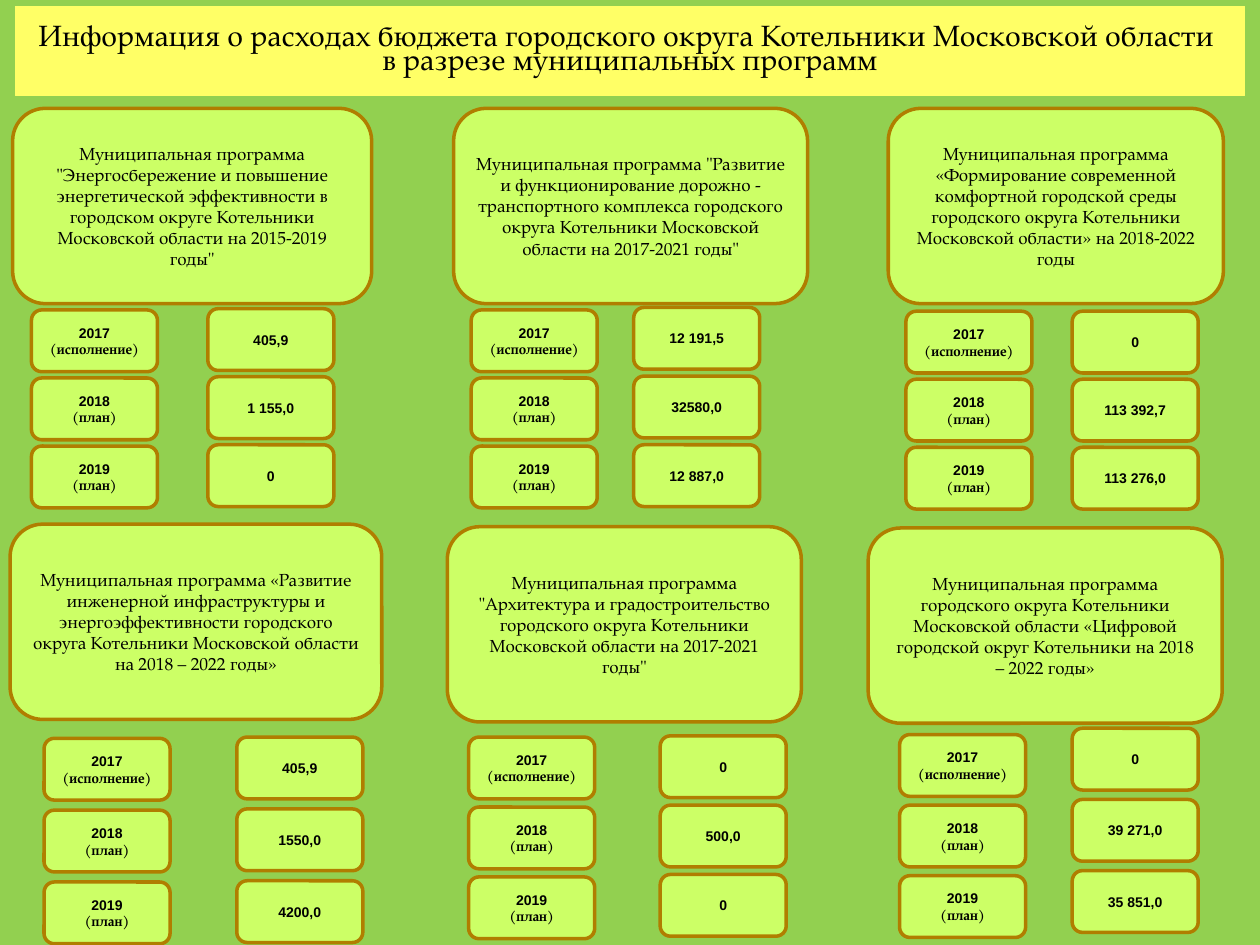
from pptx import Presentation
from pptx.dml.color import RGBColor
from pptx.enum.shapes import MSO_SHAPE
from pptx.enum.text import MSO_ANCHOR, PP_ALIGN
from pptx.util import Inches, Pt

# Grid of 100 columns by 75 rows
CELL = Inches(0.1)
COLS, ROWS = 100, 75
CARD_H, BOX_W, BOX_H = 15.5, 10, 4.9

GREEN, LIME, YELLOW, BROWN, BLACK = "92D050", "CCFF66", "FFFF66", "B07E00", "000000"
SERIF, SANS = "TeX Gyre Pagella", "Arial"

TITLE_FONT = {"name": SERIF, "size": Pt(16.8)}
CARD_FONT = {"name": SERIF, "size": Pt(10)}
VALUE_FONT = {"name": SANS, "size": Pt(8), "bold": True}
NOTE_FONT = {"name": SERIF, "size": Pt(8), "bold": True}

TITLE = [
    "Информация о расходах бюджета городского округа Котельники Московской области ",
    "в разрезе муниципальных программ",
]
YEARS = [("2017", "(исполнение)"), ("2018", "(план)"), ("2019", "(план)")]

# Programme text, card (col, row, width), labels and values (col, row, pitch), amounts
PROGRAMMES = [
    ('Муниципальная программа "Энергосбережение и повышение энергетической '
     'эффективности в городском округе Котельники Московской области на 2015-2019 годы"',
     (1, 8.6, 28.5), (2.5, 24.6, 5.4), (16.5, 24.5, 5.4), ("405,9", "1 155,0", "0")),
    ('Муниципальная программа "Развитие и функционирование дорожно - транспортного '
     'комплекса городского округа Котельники Московской области на 2017-2021 годы"',
     (36, 8.6, 28.1), (37.4, 24.6, 5.4), (50.3, 24.4, 5.45), ("12 191,5", "32580,0", "12 887,0")),
    ("Муниципальная программа «Формирование современной комфортной городской среды "
     "городского округа Котельники Московской области» на 2018-2022 годы",
     (70.5, 8.6, 26.6), (71.9, 24.7, 5.4), (85.1, 24.7, 5.4), ("0", "113 392,7", "113 276,0")),
    ("Муниципальная программа «Развитие инженерной инфраструктуры и энергоэффективности "
     "городского округа Котельники Московской области на 2018 – 2022 годы»",
     (0.8, 41.6, 29.5), (3.5, 58.6, 5.7), (18.8, 58.5, 5.7), ("405,9", "1550,0", "4200,0")),
    ('Муниципальная программа "Архитектура и градостроительство городского округа '
     'Котельники Московской области на 2017-2021 годы"',
     (35.5, 41.8, 28.1), (37.2, 58.5, 5.55), (52.4, 58.4, 5.5), ("0", "500,0", "0")),
    ("Муниципальная программа городского округа Котельники Московской области «Цифровой "
     "городской округ Котельники на 2018 – 2022 годы»",
     (68.9, 41.9, 28.1), (71.4, 58.3, 5.6), (85.1, 57.8, 5.65), ("0", "39 271,0", "35 851,0")),
]


def rgb(value):
    return RGBColor.from_string(value)


def set_format(target, values):
    for name, value in values.items():
        setattr(target, name, value)


def add_panel(s, kind, place, fill, line, width, lines, spacing=None):
    """Draw a filled shape; each line is a (text, font) paragraph."""
    sp = s.shapes.add_shape(kind, *(int(n * CELL) for n in place))
    sp.shadow.inherit = False
    sp.fill.solid()
    sp.fill.fore_color.rgb = rgb(fill)
    sp.line.color.rgb = rgb(line)
    sp.line.width = Pt(width)
    tf = sp.text_frame
    set_format(tf, {"word_wrap": True, "vertical_anchor": MSO_ANCHOR.MIDDLE})
    for i, (text, font) in enumerate(lines):
        p = tf.add_paragraph() if i else tf.paragraphs[0]
        set_format(p, {"alignment": PP_ALIGN.CENTER, "line_spacing": spacing})
        r = p.add_run()
        r.text = text
        set_format(r.font, font)
        r.font.color.rgb = rgb(BLACK)


def add_card(s, place, lines):
    add_panel(s, MSO_SHAPE.ROUNDED_RECTANGLE, place, LIME, BROWN, 2, lines)


def add_column(s, col, row, pitch, entries):
    for i, lines in enumerate(entries):
        add_card(s, (col, row + i * pitch, BOX_W, BOX_H), lines)


def add_programme(s, text, card, labels, values, amounts):
    add_card(s, (*card, CARD_H), [(text, CARD_FONT)])
    add_column(s, *labels, [[(year, VALUE_FONT), (note, NOTE_FONT)] for year, note in YEARS])
    add_column(s, *values, [[(amount, VALUE_FONT)] for amount in amounts])


def main():
    prs = Presentation()
    set_format(prs, {"slide_width": COLS * CELL, "slide_height": ROWS * CELL})
    s = prs.slides.add_slide(prs.slide_layouts[6])
    s.background.fill.solid()
    s.background.fill.fore_color.rgb = rgb(GREEN)

    # Title band
    add_panel(s, MSO_SHAPE.RECTANGLE, (1.2, 0.5, 97.6, 7.1), YELLOW, YELLOW, 0.5,
              [(text, TITLE_FONT) for text in TITLE], spacing=0.7)

    # Programme cards with yearly amounts
    for programme in PROGRAMMES:
        add_programme(s, *programme)

    prs.save("out.pptx")


if __name__ == "__main__":
    main()
